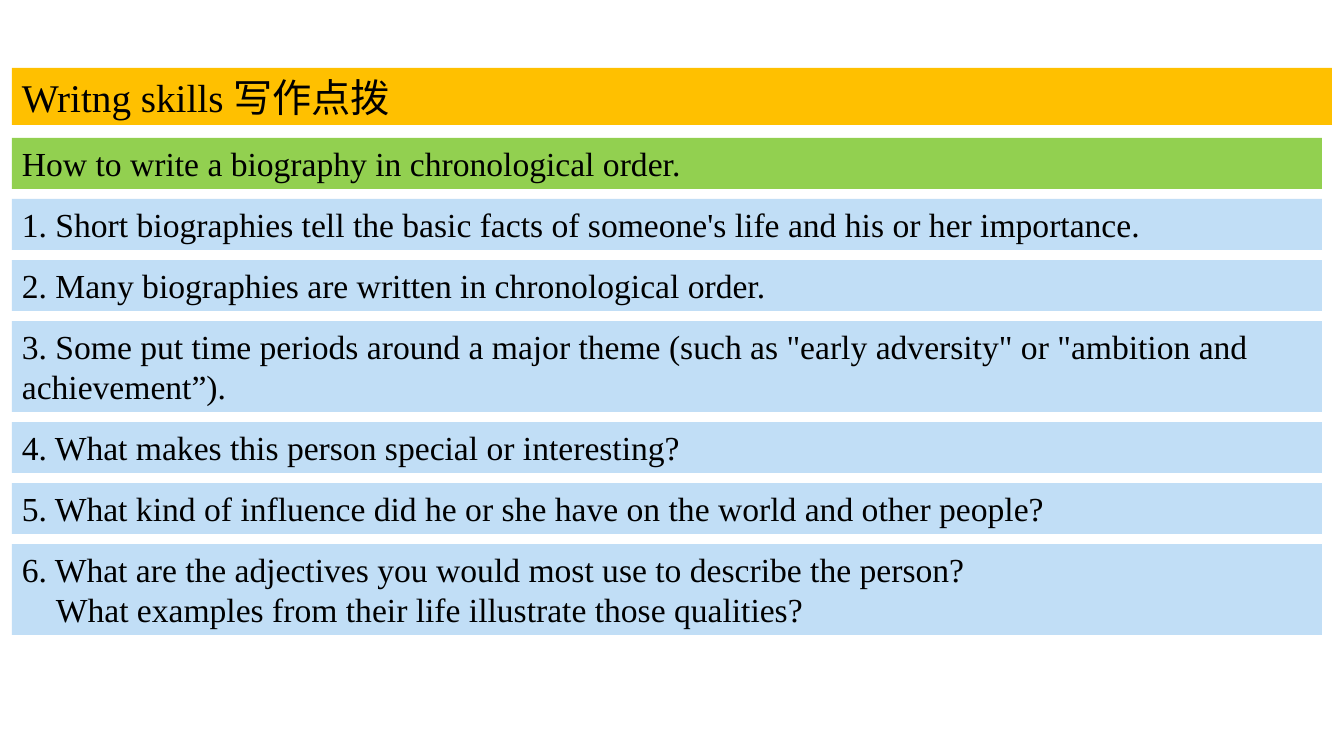
import pptx
import pptx.dml.color
import pptx.enum.shapes
import pptx.enum.text
import pptx.util

RGBColor = pptx.dml.color.RGBColor
AMBER = RGBColor(0xFF, 0xC0, 0x00)
GREEN = RGBColor(0x92, 0xD0, 0x50)
PALE_BLUE = RGBColor(0xC1, 0xDE, 0xF6)
BLACK = RGBColor(0x00, 0x00, 0x00)
FONT = "Times New Roman"
GAP = 10
ONE_LINE, TWO_LINES = 51, 91

TIPS = [
    (["1. Short biographies tell the basic facts of someone's life and his or her importance."], ONE_LINE),
    (["2. Many biographies are written in chronological order."], ONE_LINE),
    (["3. Some put time periods around a major theme (such as \"early adversity\" "
      "or \"ambition and achievement”)."], TWO_LINES),
    (["4. What makes this person special or interesting?"], ONE_LINE),
    (["5. What kind of influence did he or she have on the world and other people?"], ONE_LINE),
    (["6. What are the adjectives you would most use to describe the person?",
      "What examples from their life illustrate those qualities?"], TWO_LINES),
]


def px(n):
    """Turn pixels into EMU."""
    return pptx.util.Emu(round(n * 914400 / 100.8))


def add_text(p, text, size=24, color=BLACK, indent=0):
    """Write one formatted run into a paragraph."""
    if indent:
        p._p.get_or_add_pPr().set("marL", str(px(indent)))
    p.alignment = pptx.enum.text.PP_ALIGN.LEFT
    r = p.add_run()
    r.text = text
    r.font.name = FONT
    r.font.size = pptx.util.Pt(size)
    r.font.color.rgb = color


def add_bar(s, box, lines, fill, size=24):
    """Draw a filled bar; lines after the first hang under its text."""
    sp = s.shapes.add_shape(pptx.enum.shapes.MSO_SHAPE.RECTANGLE, *map(px, box))
    sp.shadow.inherit = False
    sp.fill.solid()
    sp.fill.fore_color.rgb = fill
    sp.line.fill.background()
    tf = sp.text_frame
    tf.word_wrap = True
    tf.auto_size = pptx.enum.text.MSO_AUTO_SIZE.SHAPE_TO_FIT_TEXT
    tf.vertical_anchor = pptx.enum.text.MSO_ANCHOR.TOP
    for i, text in enumerate(lines):
        p = tf.add_paragraph() if i else tf.paragraphs[0]
        add_text(p, text, size=size, indent=34 if i else 0)


def add_tips(s, left, top, width):
    """Stack the tip bars downwards with equal gaps."""
    for lines, height in TIPS:
        add_bar(s, (left, top, width, height), lines, PALE_BLUE)
        top += height + GAP


def main():
    """Build the slide and save it."""
    prs = pptx.Presentation()
    prs.slide_width, prs.slide_height = px(1344), px(756)
    s = prs.slides.add_slide(prs.slide_layouts[6])
    left, top, width = 12, 138, 1310
    add_bar(s, (left, 68, 1320, 57), ["Writng skills 写作点拨"], AMBER, size=28)
    add_bar(s, (left, top, width, ONE_LINE),
            ["How to write a biography in chronological order."], GREEN)
    add_tips(s, left, top + ONE_LINE + GAP, width)
    prs.save("out.pptx")


if __name__ == "__main__":
    main()
